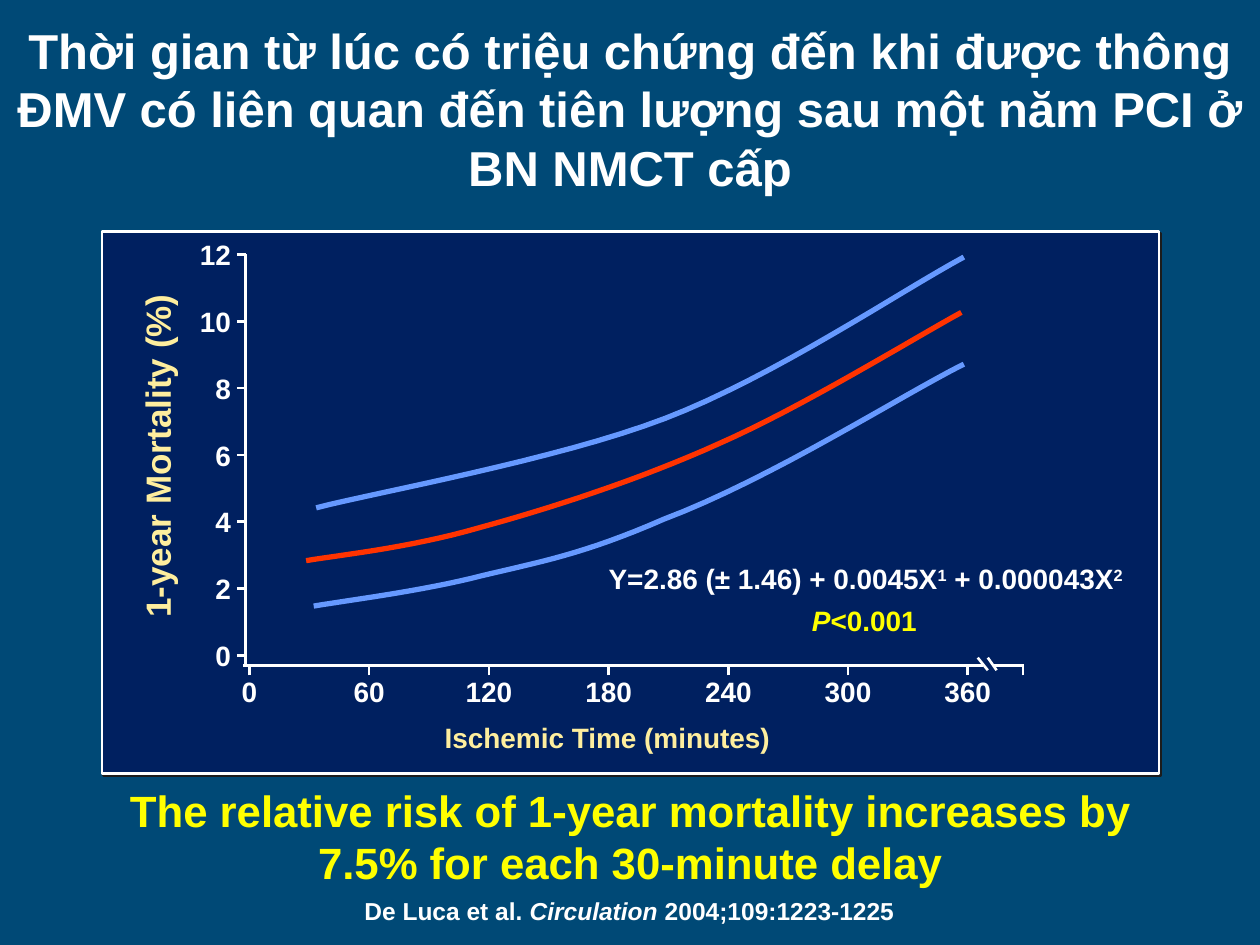
from lxml import etree
from pptx import Presentation
from pptx import util as u
from pptx.dml.color import RGBColor
from pptx.enum import shapes, text
from pptx.oxml import ns

WHITE, GOLD, CREAM = "FFFFFF", "FFFF00", "FEEE9E"
BLUE, RED = "6699FF", "FF3300"
W, H = 10, 7.5
MID, RIGHT = text.PP_ALIGN.CENTER, text.PP_ALIGN.RIGHT

TITLE = ("Thời gian từ lúc có triệu chứng đến khi được thông ĐMV "
         "có liên quan đến tiên lượng sau một năm PCI ở BN NMCT cấp")
RISK = [[("The relative risk of 1-year mortality increases by", "")],
        [("7.5% for each 30-minute delay", "")]]
SOURCE = [[("De Luca et al. ", ""), ("Circulation", "i"),
           (" 2004;109:1223-1225", "")]]
MODEL = [[("Y=2.86 (± 1.46) + 0.0045X", ""), ("1", "sup"),
          (" + 0.000043X", ""), ("2", "sup")]]
PVAL = [[("P", "i"), ("<0.001", "")]]
RATES = range(0, 13, 2)
TIMES = range(0, 361, 60)

AXIS_X, AXIS_Y, TICK = 1.95, 5.28, 0.07
ROW0, ROW = 5.2, 0.53
COL0, COL = 1.98, 0.95
TEXT_H = 0.37

CURVES = [
    (BLUE, (2.51, 4.03), [((2.97, 3.91), (4.42, 3.65), (5.28, 3.32)),
                          ((6.14, 2.99), (7.15, 2.31), (7.65, 2.04))]),
    (BLUE, (2.49, 4.81), [((2.72, 4.77), (3.36, 4.69), (3.82, 4.57)),
                          ((4.28, 4.46), (4.63, 4.4), (5.27, 4.12)),
                          ((6.12, 3.8), (7.15, 3.14), (7.65, 2.89))]),
    (RED, (2.43, 4.45), [((2.66, 4.41), (3.25, 4.35), (3.8, 4.19)),
                         ((4.35, 4.04), (5.07, 3.81), (5.71, 3.52)),
                         ((6.35, 3.24), (7.23, 2.7), (7.63, 2.48))]),
]
BREAK = [((7.84, 5.32), (7.76, 5.22)), ((7.91, 5.32), (7.84, 5.22)),
         ((7.89, AXIS_Y), (8.13, AXIS_Y)), ((8.12, 5.36), (8.12, 5.29))]

prs = Presentation()
prs.slide_width, prs.slide_height = u.Inches(W), u.Inches(H)
slide = prs.slides.add_slide(prs.slide_layouts[5])
tree = slide.shapes


def rgb(code):
    return RGBColor.from_string(code)


def inch(*nums):
    return [u.Inches(n) for n in nums]


def style(par, size, color, align):
    par.alignment = align
    par.font.size, par.font.bold = u.Pt(size), True
    par.font.name, par.font.color.rgb = "Arial", rgb(color)


def pad(frame, x, y):
    frame.margin_left = frame.margin_right = u.Inches(x)
    frame.margin_top = frame.margin_bottom = u.Inches(y)


def label(box, pars, size, color=WHITE, align=MID, wrap=True, inset=(0.1, 0.05)):
    shape = tree.add_textbox(*inch(*box))
    frame = shape.text_frame
    frame.word_wrap = wrap
    pad(frame, *inset)
    for i, runs in enumerate(pars):
        par = frame.paragraphs[0] if i == 0 else frame.add_paragraph()
        style(par, size, color, align)
        for words, kind in runs:
            run = par.add_run()
            run.text = words
            if kind == "i":
                run.font.italic = True
            elif kind == "sup":
                run._r.get_or_add_rPr().set("baseline", "30000")
    return shape


def mark(x, y, w, value, align):
    box = label((x, y, w, TEXT_H), [[(str(value), "")]], 16, align=align)
    box.text_frame.vertical_anchor = text.MSO_ANCHOR.MIDDLE


def line(start, end):
    rule = tree.add_connector(shapes.MSO_CONNECTOR.STRAIGHT, *inch(*start, *end))
    rule.line.color.rgb, rule.line.width = rgb(WHITE), u.Pt(1.5)
    etree.SubElement(rule._element.spPr, ns.qn("a:effectLst"))


def bend(start, parts, steps=16):
    a = start
    for b, c, d in parts:
        for i in range(1, steps + 1):
            t = i / steps
            s = 1 - t
            yield inch(*(s**3 * p + 3 * s * s * t * q + 3 * s * t * t * r + t**3 * v
                         for p, q, r, v in zip(a, b, c, d)))
        a = d


def curve(color, start, parts):
    pen = tree.build_freeform(*inch(*start))
    pen.add_line_segments(list(bend(start, parts)), close=False)
    shape = pen.convert_to_shape()
    shape.shadow.inherit = False
    shape.fill.background()
    shape.line.color.rgb, shape.line.width = rgb(color), u.Pt(3)


def panel(box):
    shape = tree.add_shape(shapes.MSO_SHAPE.RECTANGLE, *inch(*box))
    shape.shadow.inherit = False
    shape.fill.solid()
    shape.fill.fore_color.rgb = rgb("002060")
    shape.line.color.rgb, shape.line.width = rgb(WHITE), u.Pt(1.5)
    glow = etree.SubElement(shape._element.spPr.find(ns.qn("a:effectLst")),
                            ns.qn("a:outerShdw"), dist="17780", dir="2700000")
    etree.SubElement(glow, ns.qn("a:srgbClr"), val="1C1C1C")


def main():
    back = slide.background.fill
    back.solid()
    back.fore_color.rgb = rgb("004976")

    panel((0.81, 1.84, 8.39, 4.3))
    head = tree.title
    head.left, head.top, head.width, head.height = inch(0, 0.11, W, 1.33)
    frame = head.text_frame
    frame.text = TITLE
    frame.auto_size = text.MSO_AUTO_SIZE.NONE
    frame.vertical_anchor = text.MSO_ANCHOR.TOP
    pad(frame, 0.05, 0.05)
    style(frame.paragraphs[0], 28, WHITE, MID)

    label((0.44, 6.17, 9.12, 0.94), RISK, 25, GOLD)
    label((2.83, 7.11, 4.33, 0.42), SOURCE, 14, inset=(0, 0))
    label((3.26, 5.67, 3.12, TEXT_H), [[("Ischemic Time (minutes)", "")]], 16, CREAM)
    side = label((-0.14, 3.4, 2.78, 0.44), [[("1-year Mortality (%)", "")]], 20,
                 CREAM, wrap=False)
    side.rotation = 270
    label((4.61, 4.41, 4.52, TEXT_H), MODEL, 16)
    label((4.6, 4.74, 4.52, TEXT_H), PVAL, 16, GOLD)

    line((1.93, AXIS_Y), (7.8, AXIS_Y))
    line((AXIS_X, 2.02), (AXIS_X, 5.27))
    for i, rate in enumerate(RATES):
        y = ROW0 - i * ROW
        line((AXIS_X - TICK, y), (AXIS_X, y))
        mark(1.38, y - TEXT_H / 2, 0.55, rate, RIGHT)
    for i, time in enumerate(TIMES):
        x = COL0 + i * COL
        line((x, AXIS_Y + 0.01 + TICK), (x, AXIS_Y + 0.01))
        mark(x - 0.36, 5.3, 0.72, time, MID)
    for ends in BREAK:
        line(*ends)
    for item in CURVES:
        curve(*item)
    prs.save("out.pptx")


if __name__ == "__main__":
    main()
